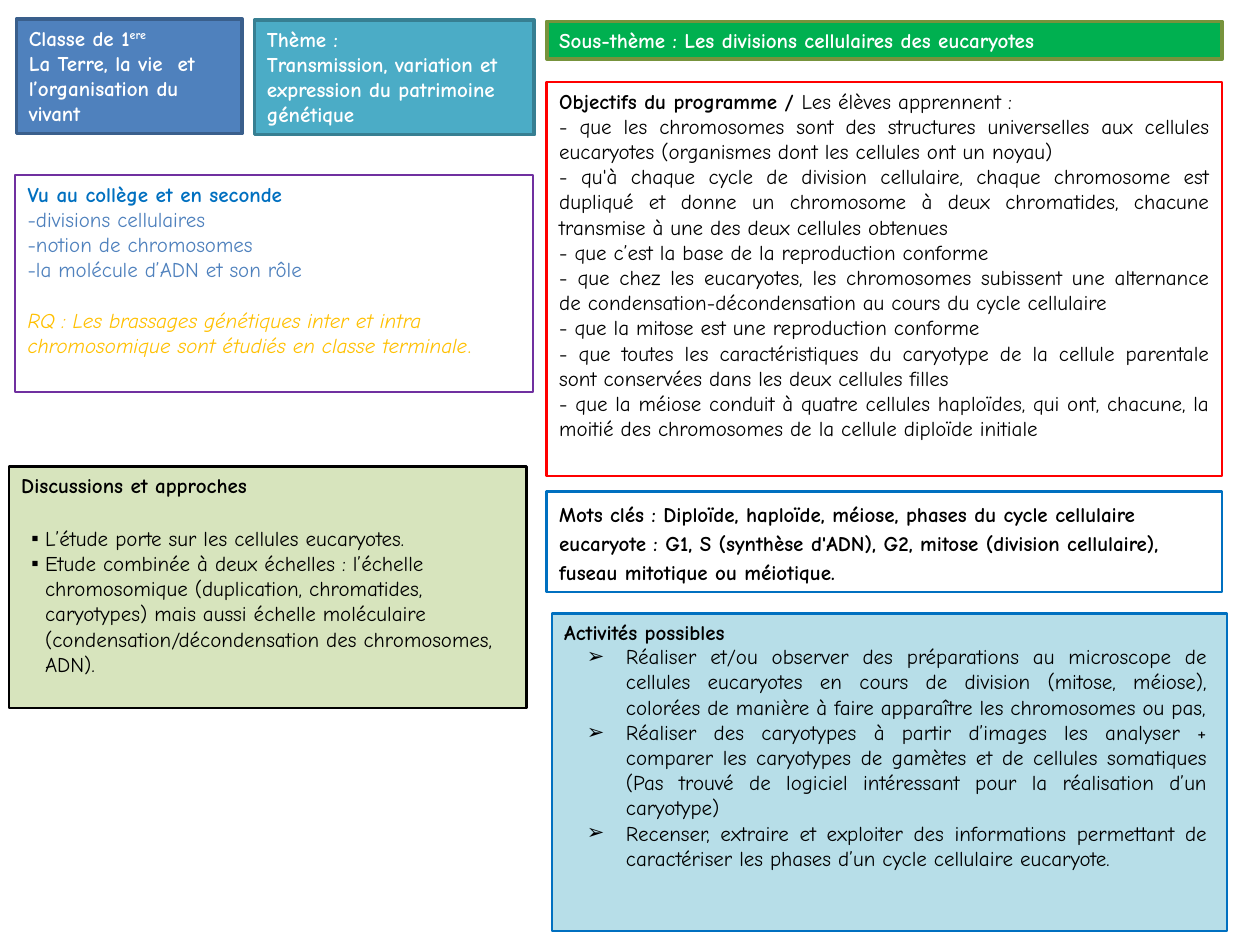
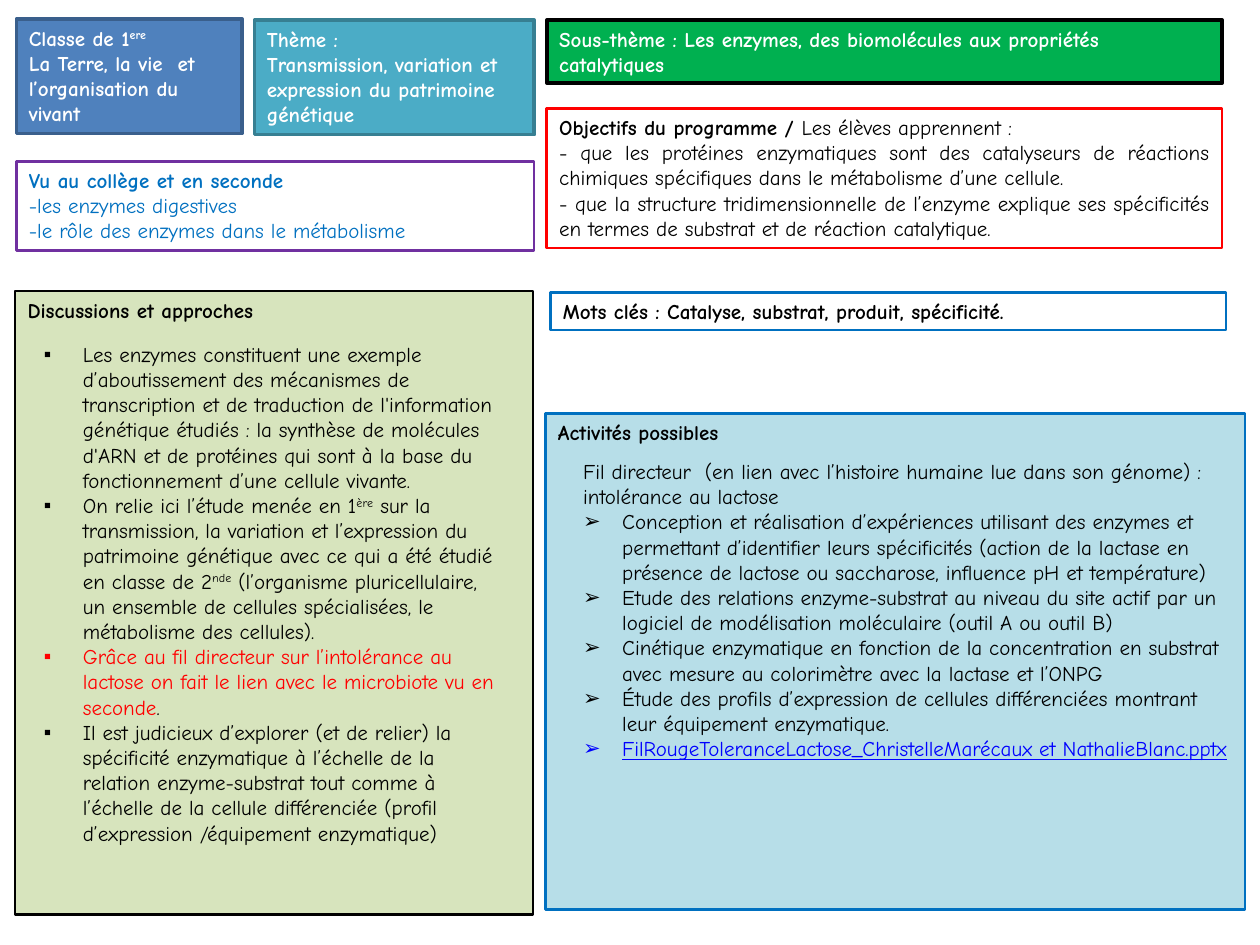
from lxml import etree
from pptx import Presentation
from pptx import util as u
from pptx.dml.color import RGBColor
from pptx.enum import shapes, text
from pptx.oxml.ns import qn

FONT, SIZE = "Comic Neue", 12
COLORS = {
    "white": "FFFFFF", "black": "000000", "red": "FF0000", "link": "0000FF",
    "class": "4F81BD", "class_edge": "3A5F8C", "theme": "4BACC6", "theme_edge": "377F92",
    "green": "00B050", "olive": "77933C", "purple": "7030A0", "blue": "0070C0",
    "gold": "FFC000", "pale_green": "D7E4BD", "pale_blue": "B7DEE8",
}
JUSTIFY = text.PP_ALIGN.JUSTIFY
LEFT_W, RIGHT_X, RIGHT_W = 4.11, 4.34, 5.36


def rgb(name):
    return RGBColor.from_string(COLORS[name])


def style_run(r, color="black", bold=False, italic=False, underline=False, sup=False):
    r.font.name, r.font.size = FONT, u.Pt(SIZE)
    r.font.color.rgb = rgb(color)
    r.font.bold, r.font.italic = bold, italic
    if underline:
        r.font.underline = True
    if sup:
        r._r.get_or_add_rPr().set("baseline", "30000")


def set_bullet(p, char, indent):
    pPr = p._p.get_or_add_pPr()
    pPr.set("marL", str(u.Inches(indent)))
    pPr.set("indent", str(-u.Inches(indent)))
    etree.SubElement(pPr, qn("a:buFont")).set("typeface", "Arial")
    etree.SubElement(pPr, qn("a:buChar")).set("char", char)


def write(tf, paras, align=text.PP_ALIGN.LEFT, **base):
    """Each paragraph is a string or a list of (string, style) runs."""
    tf.word_wrap = True
    tf.vertical_anchor = text.MSO_ANCHOR.TOP
    for i, para in enumerate(paras):
        p = tf.add_paragraph() if i else tf.paragraphs[0]
        p.alignment = align
        for words, style in [(para, {})] if isinstance(para, str) else para:
            r = p.add_run()
            r.text = words
            style_run(r, **{**base, **style})


def box(s, at, paras, line, fill=None, weight=1.5, **style):
    sp = s.shapes.add_shape(shapes.MSO_SHAPE.RECTANGLE, *map(u.Inches, at))
    sp.shadow.inherit = False
    if fill:
        sp.fill.solid()
        sp.fill.fore_color.rgb = rgb(fill)
    else:
        sp.fill.background()
    sp.line.color.rgb, sp.line.width = rgb(line), u.Pt(weight)
    write(sp.text_frame, paras, **style)
    return sp.text_frame


def bullets(s, at, items, char, indent=0.31, intro=None, **style):
    tf = s.shapes.add_textbox(*map(u.Inches, at)).text_frame
    write(tf, ([intro] if intro else []) + items, **style)
    for p in tf.paragraphs[1 if intro else 0:]:
        set_bullet(p, char, indent)


# Parts found on both slides
def header(s, subtheme, height, top, edge):
    white = dict(color="white", bold=True, weight=2)
    box(s, (0.13, 0.15, 1.79, 0.91),
        [[("Classe de 1", {}), ("ere", {"sup": True})],
         "La Terre, la vie  et l’organisation du vivant"],
        "class_edge", "class", **white)
    box(s, (2.02, 0.16, 2.22, 0.91),
        ["Thème :", "Transmission, variation et expression du patrimoine génétique"],
        "theme_edge", "theme", **white)
    box(s, (RIGHT_X, top, RIGHT_W, height), ["Sous-thème : " + subtheme], edge, "green", **white)


def objectives(s, top, height, goals):
    title = [("Objectifs du programme / ", {"bold": True}), ("Les élèves apprennent :", {})]
    tf = box(s, (RIGHT_X, top, RIGHT_W, height), [title] + ["- " + g for g in goals],
             "red", align=JUSTIFY)
    tf.paragraphs[0].alignment = text.PP_ALIGN.LEFT


def seen_before(s, at, topics, color, remark=()):
    title = [("Vu au collège et en seconde", {"bold": True, "color": "blue"})]
    tf = box(s, at, [title] + ["-" + t for t in topics] + list(remark), "purple", color=color)
    if remark:
        tf.paragraphs[-1].space_before = u.Pt(14.4)


def keywords(s, at, words):
    return box(s, at, ["Mots clés : " + words], "blue", bold=True)


def discussion(s, at):
    box(s, at, ["Discussions et approches"], "black", "pale_green", bold=True)


def activities(s, at):
    box(s, at, ["Activités possibles"], "blue", "pale_blue", bold=True)


def cell_division(s):
    header(s, "Les divisions cellulaires des eucaryotes", 0.3, 0.17, "olive")
    objectives(s, 0.65, 3.13, [
        "que les chromosomes sont des structures universelles aux cellules eucaryotes "
        "(organismes dont les cellules ont un noyau)",
        "qu'à chaque cycle de division cellulaire, chaque chromosome est dupliqué et donne "
        "un chromosome à deux chromatides, chacune transmise à une des deux cellules obtenues",
        "que c’est la base de la reproduction conforme",
        "que chez les eucaryotes, les chromosomes subissent une alternance de "
        "condensation-décondensation au cours du cycle cellulaire",
        "que la mitose est une reproduction conforme",
        "que toutes les caractéristiques du caryotype de la cellule parentale sont "
        "conservées dans les deux cellules filles",
        "que la méiose conduit à quatre cellules haploïdes, qui ont, chacune, la moitié "
        "des chromosomes de la cellule diploïde initiale",
    ])
    remark = [("RQ : Les brassages génétiques inter et intra chromosomique sont étudiés "
               "en classe terminale", {"color": "gold", "italic": True}),
              (".", {"color": "gold"})]
    seen_before(s, (0.12, 1.39, LEFT_W, 1.72),
                ["divisions cellulaires", "notion de chromosomes",
                 "la molécule d’ADN et son rôle"], "class", [remark])
    discussion(s, (0.07, 3.7, LEFT_W, 1.92))
    activities(s, (4.38, 4.87, RIGHT_W, 2.52))
    tf = keywords(s, (RIGHT_X, 3.9, RIGHT_W, 0.8),
                  "Diploïde, haploïde, méiose, phases du cycle cellulaire eucaryote : G1, S "
                  "(synthèse d'ADN), G2, mitose (division cellulaire), fuseau mitotique ou "
                  "méiotique.")
    tf.paragraphs[0].line_spacing = 1.15
    bullets(s, (0.15, 4.12, 3.9, 1.31), [
        "L’étude porte sur les cellules eucaryotes.",
        "Etude combinée à deux échelles : l’échelle chromosomique (duplication, chromatides, "
        "caryotypes) mais aussi échelle moléculaire (condensation/décondensation des "
        "chromosomes, ADN).",
    ], "▪", 0.11)
    bullets(s, (4.56, 5.06, 5.12, 2.32), [
        "Réaliser et/ou observer des préparations au microscope de cellules eucaryotes en "
        "cours de division (mitose, méiose), colorées de manière à faire apparaître les "
        "chromosomes ou pas,",
        "Réaliser des caryotypes à partir d’images les analyser + comparer les caryotypes de "
        "gamètes et de cellules somatiques (Pas trouvé de logiciel intéressant pour la "
        "réalisation d’un caryotype)",
        "Recenser, extraire et exploiter des informations permettant de caractériser les "
        "phases d’un cycle cellulaire eucaryote.",
    ], "➢", align=JUSTIFY)


def enzymes(s):
    header(s, "Les enzymes, des biomolécules aux propriétés catalytiques", 0.5, 0.16, "black")
    objectives(s, 0.86, 1.11, [
        "que les protéines enzymatiques sont des catalyseurs de réactions chimiques "
        "spécifiques dans le métabolisme d’une cellule.",
        "que la structure tridimensionnelle de l’enzyme explique ses spécificités en termes "
        "de substrat et de réaction catalytique.",
    ])
    seen_before(s, (0.13, 1.28, LEFT_W, 0.71),
                ["les enzymes digestives", "le rôle des enzymes dans le métabolisme"], "blue")
    discussion(s, (0.12, 2.31, LEFT_W, 4.95))
    activities(s, (4.33, 3.28, 5.55, 3.94))
    keywords(s, (4.37, 2.32, RIGHT_W, 0.3), "Catalyse, substrat, produit, spécificité.")
    bullets(s, (0.25, 2.66, 3.86, 4.54), [
        "Les enzymes constituent une exemple d’aboutissement des mécanismes de transcription "
        "et de traduction de l'information génétique étudiés : la synthèse de molécules d'ARN "
        "et de protéines qui sont à la base du fonctionnement d’une cellule vivante.",
        [("On relie ici l’étude menée en 1", {}), ("ère", {"sup": True}),
         (" sur la transmission, la variation et l’expression du patrimoine génétique avec ce "
          "qui a été étudié en classe de 2", {}), ("nde", {"sup": True}),
         (" (l’organisme pluricellulaire, un ensemble de cellules spécialisées, le "
          "métabolisme des cellules).", {})],
        [("Grâce au fil directeur sur l’intolérance au lactose on fait le lien avec le "
          "microbiote vu en seconde", {"color": "red"}), (".", {})],
        "Il est judicieux d’explorer (et de relier) la spécificité enzymatique à l’échelle de "
        "la relation enzyme-substrat tout comme à l’échelle de la cellule différenciée "
        "(profil d’expression /équipement enzymatique)",
    ], "▪")
    bullets(s, (4.53, 3.59, 5.35, 3.43), [
        "Conception et réalisation d’expériences utilisant des enzymes et permettant "
        "d’identifier leurs spécificités (action de la lactase en présence de lactose ou "
        "saccharose, influence pH et température)",
        "Etude des relations enzyme-substrat au niveau du site actif par un logiciel de "
        "modélisation moléculaire (outil A ou outil B)",
        "Cinétique enzymatique en fonction de la concentration en substrat avec mesure au "
        "colorimètre avec la lactase et l’ONPG",
        "Étude des profils d’expression de cellules différenciées montrant leur équipement "
        "enzymatique.",
        [("FilRougeToleranceLactose_ChristelleMarécaux et NathalieBlanc.pptx",
          {"color": "link", "underline": True})],
    ], "➢", intro="Fil directeur  (en lien avec l’histoire humaine lue dans son génome) : "
                  "intolérance au lactose")


def main():
    prs = Presentation()
    prs.slide_width, prs.slide_height = u.Inches(10), u.Inches(7.5)
    for build in (cell_division, enzymes):
        build(prs.slides.add_slide(prs.slide_layouts[6]))
    prs.save("out.pptx")


if __name__ == "__main__":
    main()
